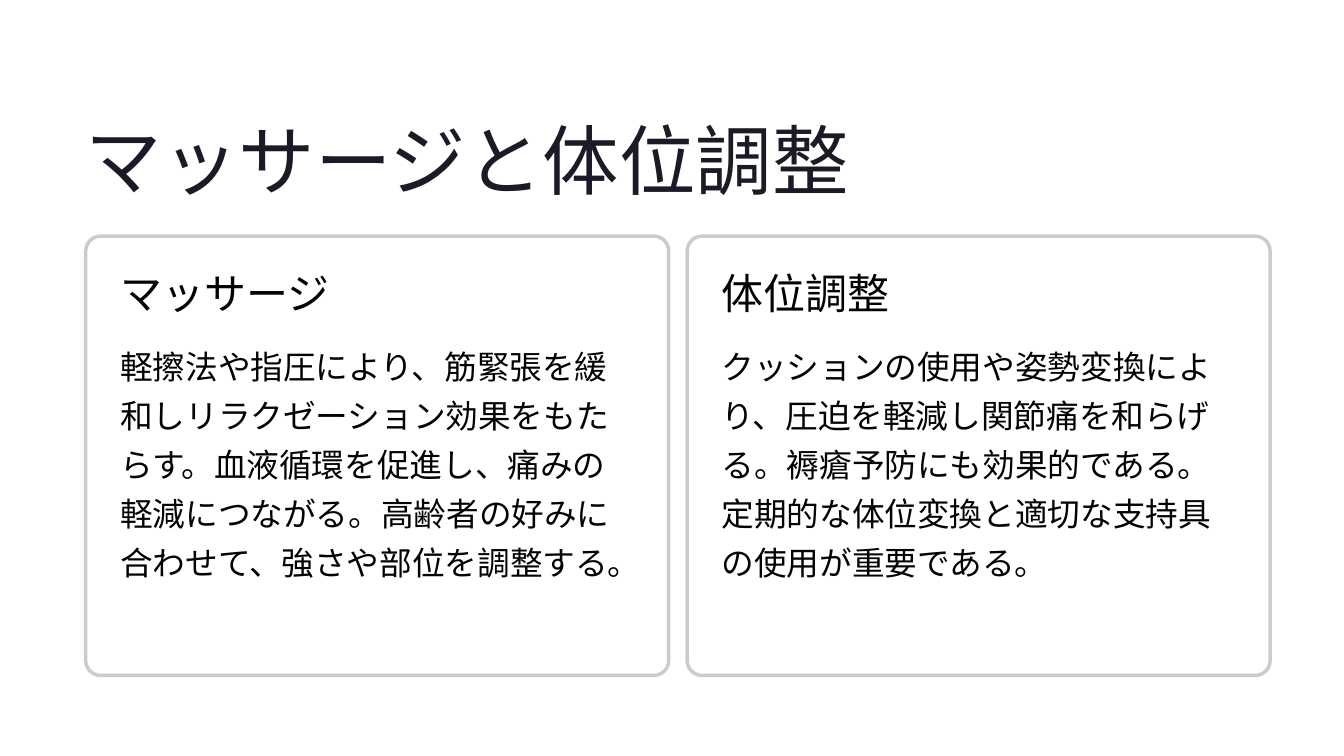
from pptx import Presentation
from pptx.dml.color import RGBColor
from pptx.enum import shapes, text
from pptx.oxml import ns, xmlchemy
from pptx.util import Pt

COLORS = {"title": "1B1B27", "text": "030303", "card": "FFFFFF", "border": "CCCCCC"}
LEFT = 73.5
CARD_TOP, CARD_WIDTH, CARD_HEIGHT, CARD_PITCH = 202.4, 499.7, 376.6, 515.5
CARD_INSET = 29.5
CARDS = [
    ("マッサージ",
     "軽擦法や指圧により、筋緊張を緩和しリラクゼーション効果をもたらす。"
     "血液循環を促進し、痛みの軽減につながる。"
     "高齢者の好みに合わせて、強さや部位を調整する。"),
    ("体位調整",
     "クッションの使用や姿勢変換により、圧迫を軽減し関節痛を和らげる。"
     "褥瘡予防にも効果的である。"
     "定期的な体位変換と適切な支持具の使用が重要である。"),
]


def color(name):
    return RGBColor.from_string(COLORS[name])


def write(box, words, *, size, font, spacing, fill="text", wrap=False):
    """Fill a text box or placeholder with one formatted paragraph."""
    frame = box.text_frame
    frame.margin_left = frame.margin_top = frame.margin_right = frame.margin_bottom = 0
    frame.auto_size = text.MSO_AUTO_SIZE.NONE
    frame.vertical_anchor = text.MSO_ANCHOR.TOP
    frame.word_wrap = wrap
    para = frame.paragraphs[0]
    para.alignment = text.PP_ALIGN.LEFT
    para.line_spacing = Pt(spacing)
    span = para.add_run()
    span.text = words
    span.font.name = font
    span.font.size = Pt(size)
    span.font.color.rgb = color(fill)


def add_title(page, words):
    title = page.shapes.title
    title.left, title.top, title.width, title.height = Pt(LEFT), Pt(93.6), Pt(657.4), Pt(82)
    write(title, words, size=65.5, font="Inter", spacing=82, fill="title")


def add_panel(page, left):
    panel = page.shapes.add_shape(
        shapes.MSO_SHAPE.ROUNDED_RECTANGLE,
        Pt(left), Pt(CARD_TOP), Pt(CARD_WIDTH), Pt(CARD_HEIGHT))
    panel.adjustments[0] = 0.034
    panel.shadow.inherit = False
    panel.fill.solid()
    panel.fill.fore_color.rgb = color("card")
    panel.line.color.rgb = color("border")
    panel.line.width = Pt(3)
    # Fill opacity of 95 %
    alpha = xmlchemy.OxmlElement("a:alpha")
    alpha.set("val", "95000")
    panel.fill._xPr.find(ns.qn("a:solidFill"))[0].append(alpha)


def add_card(page, left, heading, body):
    add_panel(page, left)
    inner = left + CARD_INSET
    box = page.shapes.add_textbox(
        Pt(inner), Pt(CARD_TOP + CARD_INSET), Pt(335.5), Pt(47.5))
    write(box, heading, size=36, font="Inter", spacing=41)
    box = page.shapes.add_textbox(
        Pt(inner), Pt(CARD_TOP + 86.4), Pt(CARD_WIDTH - 2 * CARD_INSET), Pt(242.6))
    write(box, body, size=28, font="Karla", spacing=42, wrap=True)


def main():
    deck = Presentation()
    deck.slide_width, deck.slide_height = Pt(1152), Pt(648)
    page = deck.slides.add_slide(deck.slide_layouts.get_by_name("Title Only"))

    # Title
    add_title(page, "マッサージと体位調整")

    # Two cards side by side
    for index, (heading, body) in enumerate(CARDS):
        add_card(page, LEFT + index * CARD_PITCH, heading, body)

    deck.save("out.pptx")


if __name__ == "__main__":
    main()
